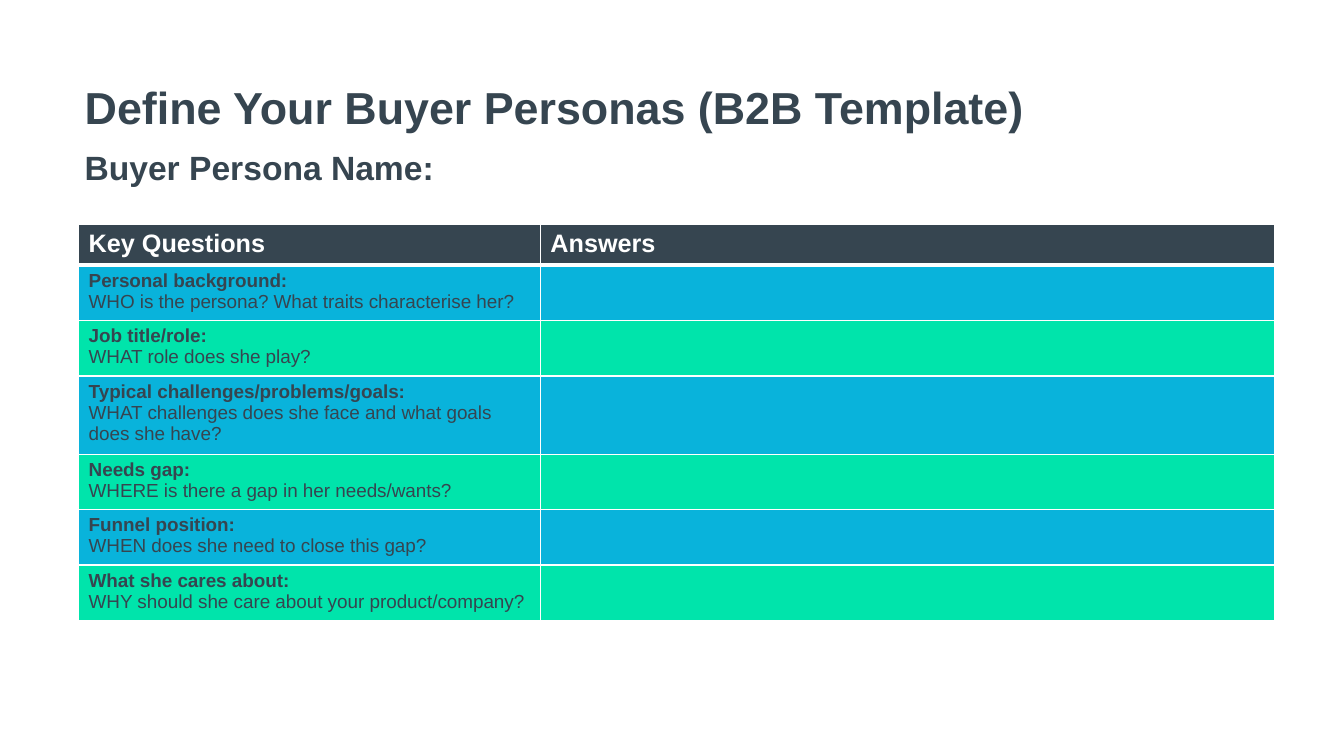
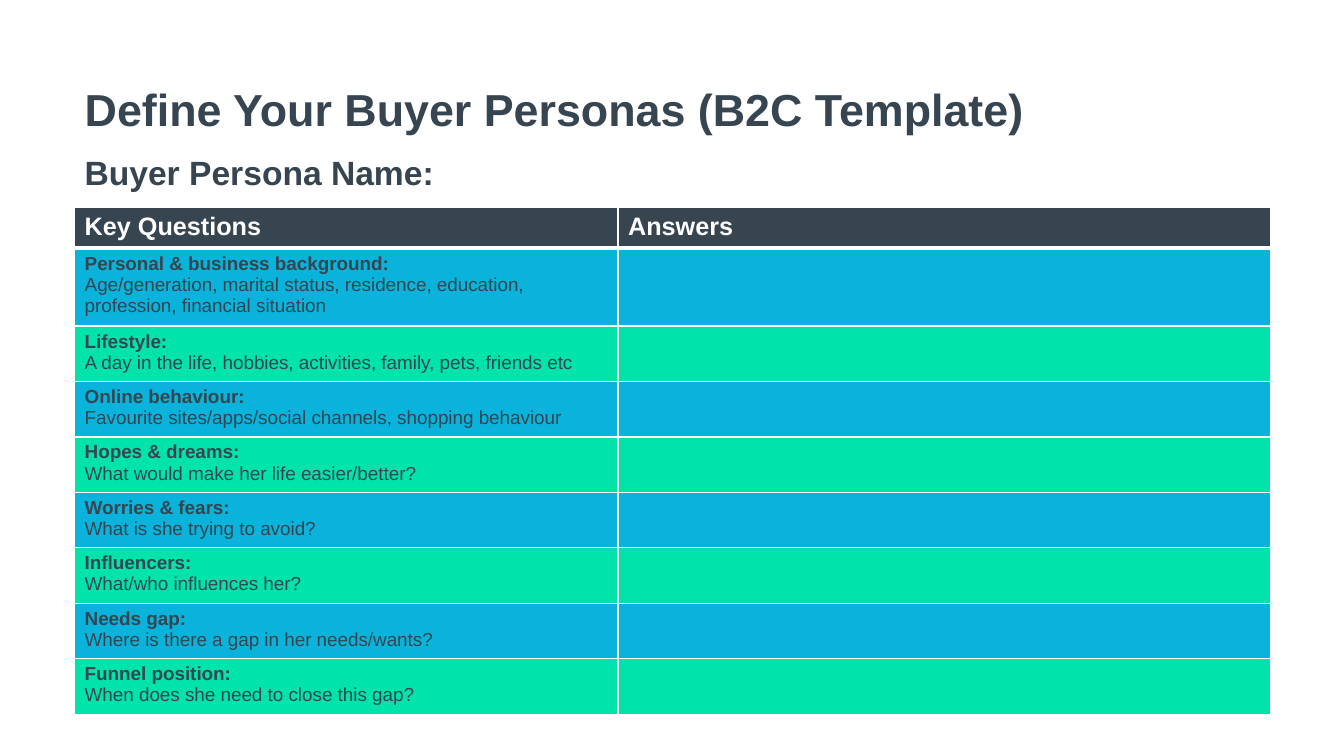
from dataclasses import dataclass

from lxml import etree
from pptx import Presentation, util as u
from pptx.dml.color import RGBColor
from pptx.enum import text as t
from pptx.oxml import ns


@dataclass(frozen=True)
class Theme:
    """Colours, font and type sizes shared by all slides."""
    font: str = "Arial"
    dark: str = "364550"
    white: str = "FFFFFF"
    bands: tuple = ("09B3DB", "00E4AB")
    title: float = 32
    sub: float = 24
    head: float = 18
    body: float = 13.5


def write(frame, text, size, color, bold=True, font="Arial", space=None, more=False):
    """Write one paragraph of text into a frame."""
    para = frame.add_paragraph() if more else frame.paragraphs[0]
    para.alignment = t.PP_ALIGN.LEFT
    para.line_spacing = space
    run = para.add_run()
    run.text = text
    run.font.name, run.font.size, run.font.bold = font, u.Pt(size), bold
    run.font.color.rgb = RGBColor.from_string(color)


class Deck:
    """Hold the style and the current slide."""

    def __init__(self, theme):
        """Start an empty wide deck."""
        self.theme = theme
        self.file = Presentation()
        self.file.slide_width = u.Inches(13.33)
        self.file.slide_height = u.Inches(7.5)

    def page(self):
        """Add a title-only slide."""
        self.slide = self.file.slides.add_slide(self.file.slide_layouts[5])

    def title(self, text, top):
        """Place and format the title."""
        shape = self.slide.shapes.title
        shape.left, shape.top = u.Inches(0.74), u.Inches(top)
        shape.width, shape.height = u.Inches(11.5), u.Inches(1.55)
        frame = shape.text_frame
        frame.auto_size = t.MSO_AUTO_SIZE.NONE
        frame.vertical_anchor = t.MSO_ANCHOR.MIDDLE
        write(frame, text, self.theme.title, self.theme.dark,
              font=self.theme.font, space=0.9)

    def label(self, text, top):
        """Add the line under the title."""
        box = self.slide.shapes.add_textbox(
            u.Inches(0.74), u.Inches(top), u.Inches(11.92), u.Inches(0.5))
        box.text_frame.word_wrap = True
        write(box.text_frame, text, self.theme.sub, self.theme.dark,
              font=self.theme.font, space=0.9)

    def cell(self, cell, fill, top=1, base=1):
        """Give a cell its borders and fill."""
        props = cell._tc.get_or_add_tcPr()
        for side, width in zip("LRTB", (1, 1, top, base)):
            line = etree.SubElement(props, ns.qn(f"a:ln{side}"), w=str(u.Pt(width)))
            solid = etree.SubElement(line, ns.qn("a:solidFill"))
            etree.SubElement(solid, ns.qn("a:srgbClr"), val=self.theme.white)
        cell.fill.solid()
        cell.fill.fore_color.rgb = RGBColor.from_string(fill)

    def table(self, left, top, widths, rows):
        """Add a table of questions with room for answers."""
        look = self.theme
        table = self.slide.shapes.add_table(
            len(rows) + 1, 2, u.Inches(left), u.Inches(top),
            u.Inches(sum(widths)), u.Inches(0.37 + 0.51 * len(rows))).table
        table.first_row = True
        table.horz_banding = False
        for col, width in zip(table.columns, widths):
            col.width = u.Inches(width)
        for row in table.rows:
            row.height = u.Inches(0.51)
        table.rows[0].height = u.Inches(0.37)
        for col, text in enumerate(("Key Questions", "Answers")):
            head = table.cell(0, col)
            self.cell(head, look.dark, base=3)
            write(head.text_frame, text, look.head, look.white, font=look.font)
        for num, (topic, ask) in enumerate(rows, 1):
            for col in range(2):
                self.cell(table.cell(num, col), look.bands[(num - 1) % 2],
                          top=3 if num == 1 else 1)
            frame = table.cell(num, 0).text_frame
            write(frame, topic, look.body, look.dark, font=look.font)
            write(frame, ask, look.body, look.dark, bold=False,
                  font=look.font, more=True)


WORK = (
    ("Personal background:", "WHO is the persona? What traits characterise her?"),
    ("Job title/role:", "WHAT role does she play?"),
    ("Typical challenges/problems/goals:",
     "WHAT challenges does she face and what goals does she have?"),
    ("Needs gap:", "WHERE is there a gap in her needs/wants?"),
    ("Funnel position:", "WHEN does she need to close this gap?"),
    ("What she cares about:", "WHY should she care about your product/company?"),
)
HOME = (
    ("Personal & business background:",
     "Age/generation, marital status, residence, education, profession, "
     "financial situation"),
    ("Lifestyle:", "A day in the life, hobbies, activities, family, pets, friends etc"),
    ("Online behaviour:", "Favourite sites/apps/social channels, shopping behaviour"),
    ("Hopes & dreams:", "What would make her life easier/better?"),
    ("Worries & fears:", "What is she trying to avoid?"),
    ("Influencers:", "What/who influences her?"),
    ("Needs gap:", "Where is there a gap in her needs/wants?"),
    ("Funnel position:", "When does she need to close this gap?"),
)


def main():
    """Build both persona slides."""
    deck = Deck(Theme())
    for kind, high, sub, left, top, widths, rows in (
            ("B2B", 0.32, 1.45, 0.78, 2.23, (4.58, 7.28), WORK),
            ("B2C", 0.34, 1.5, 0.74, 2.06, (5.39, 6.47), HOME)):
        deck.page()
        deck.title(f"Define Your Buyer Personas ({kind} Template)", high)
        deck.label("Buyer Persona Name:", sub)
        deck.table(left, top, widths, rows)
    deck.file.save("out.pptx")


if __name__ == "__main__":
    main()
